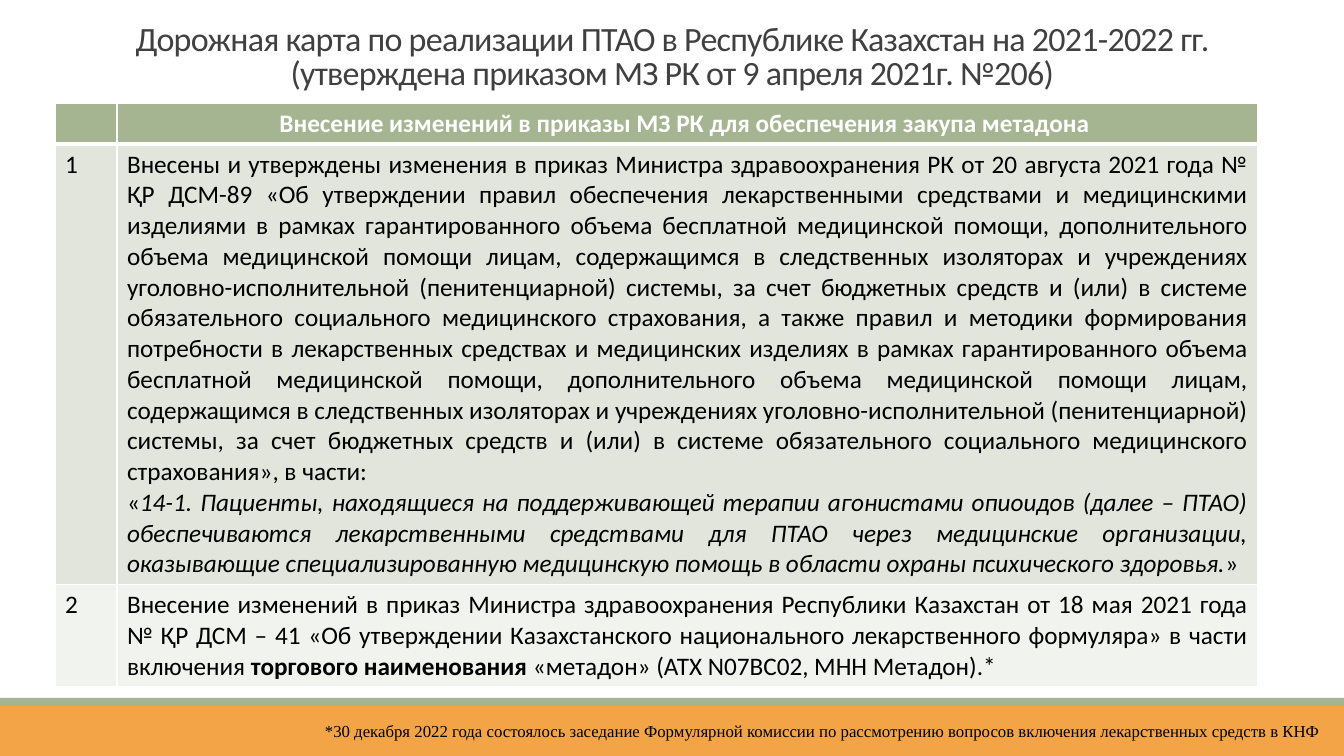
"""Roadmap slide with a two-row table of regulatory changes."""
import pptx
import pptx.dml.color
import pptx.enum.shapes
import pptx.enum.text
import pptx.oxml
import pptx.oxml.ns
import pptx.util

PX = 9144000 / 1008
ALIGN = pptx.enum.text.PP_ALIGN
ANCHOR = pptx.enum.text.MSO_ANCHOR
AUTO = pptx.enum.text.MSO_AUTO_SIZE
ORANGE, GREEN, WHITE, BLACK = "F3A447", "A5B592", "FFFFFF", "000000"
BANDS = ("E1E5DC", "F0F3EE")

TITLE = ("Дорожная карта по реализации ПТАО в Республике Казахстан на 2021-2022 гг. "
         "(утверждена приказом МЗ РК от 9 апреля 2021г. №206)")
HEADER = "Внесение изменений в приказы МЗ РК для обеспечения закупа метадона "
DETAINEES = ("бесплатной медицинской помощи, дополнительного объема медицинской помощи лицам, "
             "содержащимся в следственных изоляторах и учреждениях уголовно-исполнительной "
             "(пенитенциарной) системы, за счет бюджетных средств и (или) в системе "
             "обязательного социального медицинского страхования")
ORDER = ("Внесены и утверждены изменения в приказ Министра здравоохранения РК "
         "от 20 августа 2021 года № ҚР ДСМ-89 «Об утверждении правил обеспечения "
         "лекарственными средствами и медицинскими изделиями в рамках гарантированного объема "
         + DETAINEES +
         ", а также правил и методики формирования потребности в лекарственных средствах "
         "и медицинских изделиях в рамках гарантированного объема " + DETAINEES + "», в части: ")
CLAUSE = ("14-1. Пациенты, находящиеся на поддерживающей терапии агонистами опиоидов "
          "(далее – ПТАО) обеспечиваются лекарственными средствами для ПТАО через медицинские "
          "организации, оказывающие специализированную медицинскую помощь в области охраны "
          "психического здоровья.")
FORMULARY = ("Внесение изменений в приказ Министра здравоохранения Республики Казахстан "
             "от 18 мая 2021 года № ҚР ДСМ – 41 «Об утверждении Казахстанского национального "
             "лекарственного формуляра» в части включения ")
CHANGES = [
    [[(ORDER, "")], [("«", ""), (CLAUSE, "i"), ("»", "")]],
    [[(FORMULARY, ""), ("торгового наименования ", "b"),
      ("«метадон» (АТХ N07BC02, МНН Метадон).*", "")]],
]
FOOTNOTE = ("*30 декабря 2022 года состоялось заседание Формулярной комиссии "
            "по рассмотрению вопросов включения лекарственных средств в КНФ")


def px(n):
    """Turn whole pixels into EMU."""
    return pptx.util.Emu(round(n * PX))


def rgb(color):
    """Turn a hex string into a colour."""
    return pptx.dml.color.RGBColor.from_string(color)


class Deck:
    """Holds the presentation, its text style and the current slide."""

    font = "Calibri"
    size = 18

    def __init__(self, width, height):
        """Open a title-only slide of the given size."""
        self.prs = pptx.Presentation()
        self.prs.slide_width, self.prs.slide_height = px(width), px(height)
        self.s = self.prs.slides.add_slide(self.prs.slide_layouts[5])

    def run(self, p, text, color=BLACK, size=None, font=None, style=""):
        """Add one formatted run."""
        r = p.add_run()
        r.text = text
        r.font.name = font or self.font
        r.font.size = pptx.util.Pt(size or self.size)
        r.font.color.rgb = rgb(color)
        r.font.bold, r.font.italic = "b" in style, "i" in style
        return r

    def bar(self, x, y, w, h, color):
        """Add a plain filled rectangle."""
        sp = self.s.shapes.add_shape(pptx.enum.shapes.MSO_SHAPE.RECTANGLE,
                                     px(x), px(y), px(w), px(h))
        sp.shadow.inherit = False
        sp.fill.solid()
        sp.fill.fore_color.rgb = rgb(color)
        sp.line.fill.background()

    def title(self, x, y, w, h, text):
        """Place and fill the title placeholder."""
        sp = self.s.shapes.title
        sp.left, sp.top, sp.width, sp.height = px(x), px(y), px(w), px(h)
        tf = sp.text_frame
        tf.word_wrap, tf.auto_size = True, AUTO.NONE
        tf.vertical_anchor = ANCHOR.BOTTOM
        p = tf.paragraphs[0]
        p.alignment, p.line_spacing = ALIGN.CENTER, 0.85
        r = self.run(p, text, "404040", 24.3)
        r.font._element.set("spc", "-50")

    def note(self, x, y, w, h, text):
        """Add a footnote text box."""
        tf = self.s.shapes.add_textbox(px(x), px(y), px(w), px(h)).text_frame
        tf.word_wrap, tf.auto_size = True, AUTO.SHAPE_TO_FIT_TEXT
        p = tf.paragraphs[0]
        p.line_spacing, p.space_after = 1.07, pptx.util.Pt(8)
        self.run(p, text, size=12, font="Times New Roman")

    def cell(self, cell, paragraphs, fill, color=BLACK, align=ALIGN.LEFT, bottom=1):
        """Fill a table cell with paragraphs of runs and white borders."""
        tf = cell.text_frame
        for i, runs in enumerate(paragraphs):
            p = tf.add_paragraph() if i else tf.paragraphs[0]
            p.alignment = align
            for text, style in runs:
                self.run(p, text, color, style=style)
        tc_pr = cell._tc.get_or_add_tcPr()
        for side, width in (("L", 1), ("R", 1), ("T", 1), ("B", bottom)):
            tc_pr.append(pptx.oxml.parse_xml(
                f'<a:ln{side} {pptx.oxml.ns.nsdecls("a")} w="{pptx.util.Pt(width)}">'
                f'<a:solidFill><a:srgbClr val="{WHITE}"/></a:solidFill></a:ln{side}>'))
        cell.fill.solid()
        cell.fill.fore_color.rgb = rgb(fill)

    def table(self, x, y, cols, rows, header, changes):
        """Add the numbered table of changes."""
        table = self.s.shapes.add_table(len(rows), len(cols), px(x), px(y),
                                        px(sum(cols)), px(sum(rows))).table
        for column, w in zip(table.columns, cols):
            column.width = px(w)
        for row, h in zip(table.rows, rows):
            row.height = px(h)
        for i, text in enumerate(("", header)):
            self.cell(table.cell(0, i), [[(text, "b")]] if text else [],
                      GREEN, WHITE, ALIGN.CENTER, bottom=3)
        for n, (change, band) in enumerate(zip(changes, BANDS), 1):
            self.cell(table.cell(n, 0), [[(str(n), "")]], band)
            self.cell(table.cell(n, 1), change, band, align=ALIGN.JUSTIFY)


def main():
    """Build and save the slide."""
    deck = Deck(1344, 756)
    deck.bar(0, 706, 1344, 50, ORANGE)
    deck.bar(0, 698, 1344, 8, GREEN)
    deck.title(118, 26, 1109, 72, TITLE)
    deck.table(55, 103, (62, 1141), (41, 440, 102), HEADER, CHANGES)
    deck.note(315, 714, 1029, 31, FOOTNOTE)
    deck.prs.save("out.pptx")


if __name__ == "__main__":
    main()
